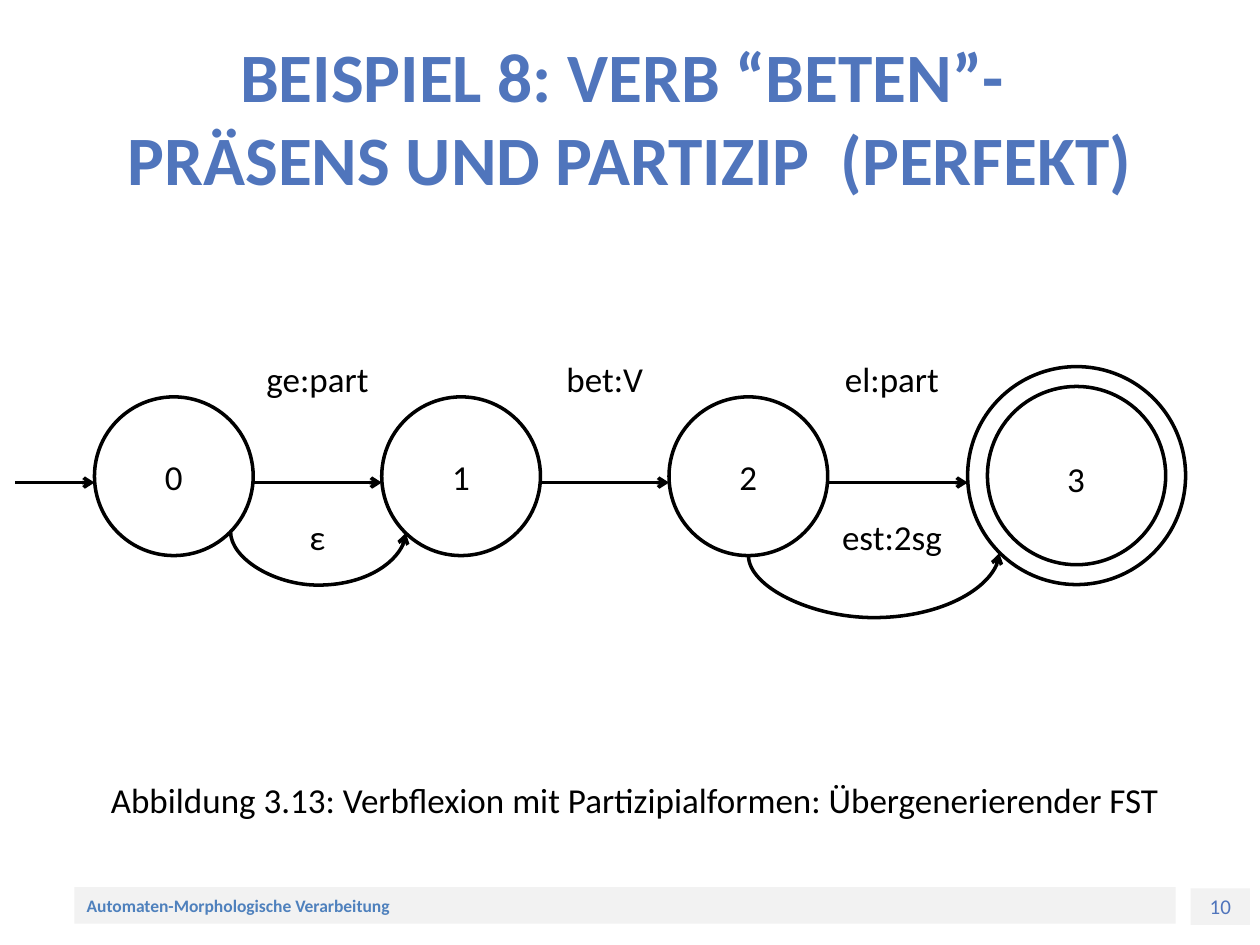
"""Build the slide with the finite-state transducer for the verb "beten"."""
import dataclasses

import pptx
import pptx.dml.color
import pptx.enum.shapes
import pptx.enum.text
import pptx.oxml
import pptx.oxml.ns
import pptx.util

Inches = pptx.util.Inches
Pt = pptx.util.Pt
SHAPE = pptx.enum.shapes.MSO_SHAPE
CONNECTOR = pptx.enum.shapes.MSO_CONNECTOR
ALIGN = pptx.enum.text.PP_ALIGN
ANCHOR = pptx.enum.text.MSO_ANCHOR


@dataclasses.dataclass(frozen=True)
class Theme:
    """Colours, font and sizes of the slide."""
    font: str = "Calibri"
    ink: str = "000000"
    paper: str = "FFFFFF"
    band: str = "F2F2F2"
    heading: str = "5075BC"
    footer: str = "4F81BD"
    title_size: float = 39.6
    body_size: float = 20
    number_size: float = 12
    footer_size: float = 10
    line_width: float = 2


THEME = Theme()
BODY = {"size": Pt(THEME.body_size), "color": THEME.ink}
TITLE = {"size": Pt(THEME.title_size), "bold": True, "color": THEME.heading}
NUMBER = {"size": Pt(THEME.number_size), "color": THEME.heading}
FOOTER = {"size": Pt(THEME.footer_size), "bold": True, "color": THEME.footer}

STATE_LEFT, STATE_TOP, STATE_SIZE, STATE_STEP = 0.75, 3.15, 1.26, 2.28
FINAL_LEFT, FINAL_TOP, FINAL_SIZE = 7.68, 2.91, 1.73
ARROW_Y = 3.83
UPPER_LABEL_Y, LOWER_LABEL_Y = 2.81, 4.06


def rgb(value):
    """Return a colour object for a hex string."""
    return pptx.dml.color.RGBColor.from_string(value)


def write(sp, text, style, align=ALIGN.CENTER):
    """Put formatted, vertically centred text into a shape."""
    tf = sp.text_frame
    frame = {"text": text, "word_wrap": True, "vertical_anchor": ANCHOR.MIDDLE,
             "auto_size": pptx.enum.text.MSO_AUTO_SIZE.NONE}
    for name, value in frame.items():
        setattr(tf, name, value)
    p = tf.paragraphs[0]
    p.alignment = align
    for r in p.runs:
        r.font.name = THEME.font
        for name, value in style.items():
            if name == "color":
                r.font.color.rgb = rgb(value)
            else:
                setattr(r.font, name, value)


def add_title(s, text, *box):
    """Move and fill the title placeholder."""
    sp = s.shapes.title
    for name, value in zip(("left", "top", "width", "height"), box):
        setattr(sp, name, Inches(value))
    write(sp, text, TITLE)


def add_label(s, text, *box):
    """Add a centred text box."""
    write(s.shapes.add_textbox(*map(Inches, box)), text, BODY)


def add_figure(s, kind, fill, *box):
    """Add a plain filled shape without outline."""
    sp = s.shapes.add_shape(kind, *map(Inches, box))
    sp.shadow.inherit = False
    sp.fill.solid()
    sp.fill.fore_color.rgb = rgb(fill)
    sp.line.fill.background()
    return sp


def add_state(s, kind, left, top, size):
    """Add an outlined round state."""
    sp = add_figure(s, kind, THEME.paper, left, top, size, size)
    sp.line.color.rgb = rgb(THEME.ink)
    sp.line.width = Pt(THEME.line_width)
    return sp


def add_arrow(s, kind, x0, y0, x1, y1):
    """Add a connector with an open arrowhead at its end."""
    cn = s.shapes.add_connector(kind, *map(Inches, (x0, y0, x1, y1)))
    cn.line.color.rgb = rgb(THEME.ink)
    cn.line.width = Pt(THEME.line_width)
    ln = cn.line._get_or_add_ln()
    pptx.oxml.ns.qn("a:tailEnd")
    ns = pptx.oxml.ns.nsdecls("a")
    ln.append(pptx.oxml.parse_xml(f'<a:tailEnd {ns} type="arrow"/>'))
    cn._element.spPr.append(pptx.oxml.parse_xml(f"<a:effectLst {ns}/>"))
    return cn


def add_arc(s, x0, y0, x1, y1, bottom):
    """Add a curved arrow that sags to the given bottom."""
    rise, run = abs(y1 - y0), x1 - x0
    left, top = (x0 + x1 - rise) / 2, (y0 + y1 - run) / 2
    cn = add_arrow(s, CONNECTOR.CURVE, left, top, left + rise, top + run)
    xfrm = cn._element.spPr.find(pptx.oxml.ns.qn("a:xfrm"))
    turn = {"rot": str(90 * 60000), "flipH": str(int(y1 < y0)), "flipV": "1"}
    for name, value in turn.items():
        xfrm.set(name, value)
    geom = cn._element.spPr.find(pptx.oxml.ns.qn("a:prstGeom"))
    for old in list(geom):
        geom.remove(old)
    sag = round((bottom - y0) / (y1 - y0) * 100000)
    geom.append(pptx.oxml.parse_xml(
        f'<a:avLst {pptx.oxml.ns.nsdecls("a")}><a:gd name="adj1" fmla="val {sag}"/></a:avLst>'))


def add_footer(s):
    """Add the footer band and the slide number."""
    write(add_figure(s, SHAPE.RECTANGLE, THEME.band, 9.45, 7.05, 0.47, 0.29), "10", NUMBER)
    write(add_figure(s, SHAPE.RECTANGLE, THEME.band, 0.59, 7.04, 8.74, 0.29),
          "Automaten-Morphologische Verarbeitung", FOOTER, ALIGN.LEFT)


def add_transducer(s):
    """Add the states, transitions and transition labels."""
    lefts = [STATE_LEFT + i * STATE_STEP for i in range(3)]
    for i, left in enumerate(lefts):
        write(add_state(s, SHAPE.OVAL, left, STATE_TOP, STATE_SIZE), str(i), BODY)
    add_state(s, SHAPE.DONUT, FINAL_LEFT, FINAL_TOP, FINAL_SIZE).adjustments[0] = 0.091
    add_label(s, "3", 7.99, 3.36, 1.1, 0.87)

    starts = [0.12] + [left + STATE_SIZE for left in lefts]
    for start, end in zip(starts, lefts + [FINAL_LEFT]):
        add_arrow(s, CONNECTOR.STRAIGHT, start, ARROW_Y, end, ARROW_Y)
    add_arc(s, 1.83, 4.22, 3.22, 4.23, 4.65)
    add_arc(s, 5.94, 4.41, 7.93, 4.39, 4.9)

    labels = [("ge:part", 0, UPPER_LABEL_Y), ("bet:V", 1, UPPER_LABEL_Y),
              ("el:part", 2, UPPER_LABEL_Y), ("ε", 0, LOWER_LABEL_Y),
              ("est:2sg", 2, LOWER_LABEL_Y)]
    for text, gap, top in labels:
        add_label(s, text, 1.85 + gap * STATE_STEP, top, 1.34, 0.39)


def main():
    """Build and save the presentation."""
    prs = pptx.Presentation()
    prs.slide_width, prs.slide_height = Inches(10), Inches(7.5)
    s = prs.slides.add_slide(prs.slide_layouts[5])
    add_footer(s)
    add_title(s, "BEISPIEL 8: VERB “BETEN”- \vPRÄSENS UND PARTIZIP  (PERFEKT)", 0.5, 0.3, 9, 1.25)
    add_transducer(s)
    add_label(s, "Abbildung 3.13: Verbflexion mit Partizipialformen: Übergenerierender FST",
              0.59, 6.03, 8.9, 0.63)
    prs.save("out.pptx")


if __name__ == "__main__":
    main()
